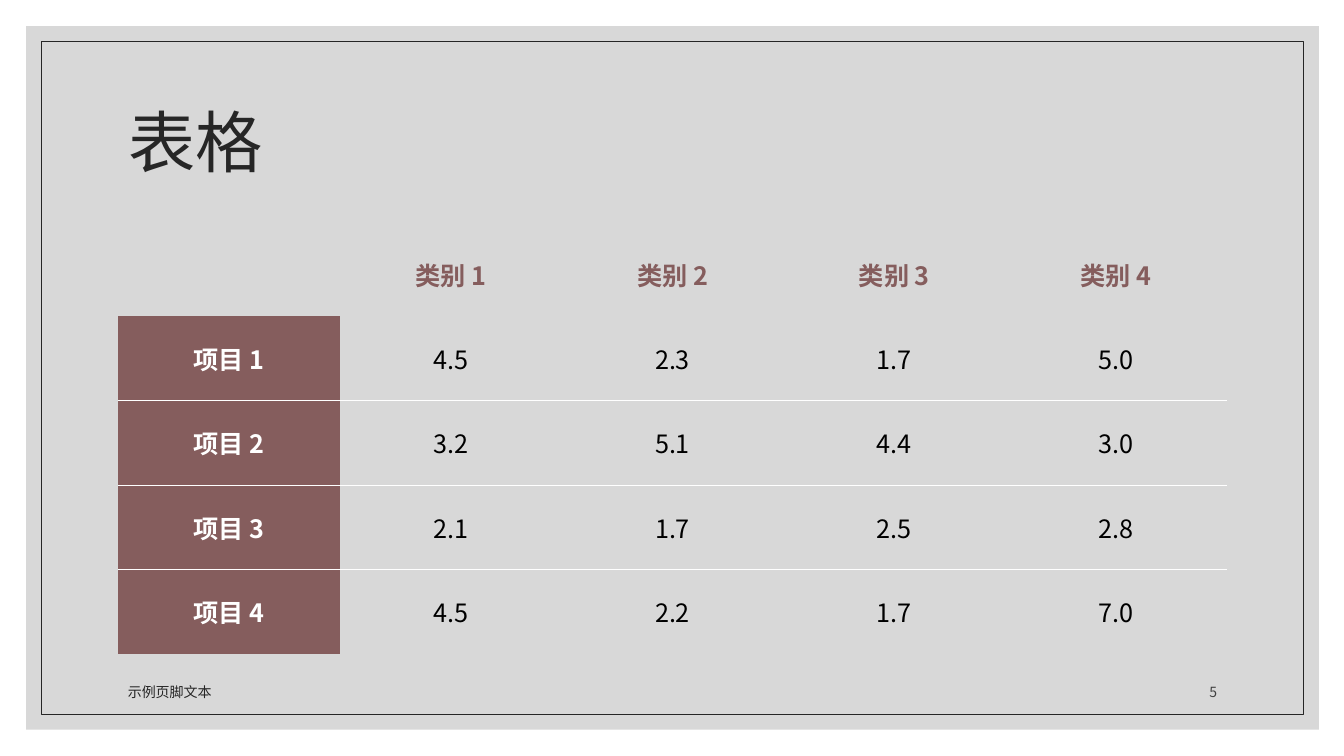
from lxml import etree
from pptx import Presentation
from pptx import util as u
from pptx.dml.color import RGBColor
from pptx.enum import shapes, text
from pptx.oxml.ns import qn

FONT = "Noto Sans CJK SC"
INK, GREY, ACCENT, WHITE, BLACK = "262626", "404040", "855D5D", "FFFFFF", "000000"
PLAIN_TABLE_STYLE = "{2D5ABB26-0587-4C30-8999-92F81FD0307C}"
LEFT, WIDTH = 1.17, 11

CATEGORIES = ["类别 1", "类别 2", "类别 3", "类别 4"]
ITEMS = [
    ("项目 1", "4.5", "2.3", "1.7", "5.0"),
    ("项目 2", "3.2", "5.1", "4.4", "3.0"),
    ("项目 3", "2.1", "1.7", "2.5", "2.8"),
    ("项目 4", "4.5", "2.2", "1.7", "7.0"),
]


def rgb(value):
    return RGBColor.from_string(value)


def inches(box):
    return [u.Inches(length) for length in box]


def add_run(paragraph, content, size, color, bold=False):
    run = paragraph.add_run()
    run.text = content
    run.font.size = u.Pt(size)
    run.font.bold = bold
    run.font.name = FONT
    run.font.color.rgb = rgb(color)
    east_asian = etree.SubElement(run.font._element, qn("a:ea"))
    east_asian.set("typeface", FONT)


def add_frame(slide, box, inset):
    """Translucent grey panel with a thin outline inside it."""
    left, top, width, height = box
    panel = slide.shapes.add_shape(shapes.MSO_SHAPE.RECTANGLE, *inches(box))
    panel.fill.solid()
    panel.fill.fore_color.rgb = rgb("BFBFBF")
    color = panel.element.spPr.find(".//" + qn("a:srgbClr"))
    etree.SubElement(color, qn("a:alpha")).set("val", "60000")
    panel.line.fill.background()

    inner = (left + inset, top + inset, width - 2 * inset, height - 2 * inset)
    outline = slide.shapes.add_shape(shapes.MSO_SHAPE.RECTANGLE, *inches(inner))
    outline.fill.background()
    outline.line.color.rgb = rgb(INK)
    outline.line.width = u.Pt(0.5)
    for shape in (panel, outline):
        shape.shadow.inherit = False


def place_title(slide, box, content):
    title = slide.shapes.title
    title.left, title.top, title.width, title.height = inches(box)
    # Bring the title in front of the frame
    title.element.getparent().append(title.element)
    frame = title.text_frame
    frame.word_wrap = True
    frame.vertical_anchor = text.MSO_ANCHOR.MIDDLE
    paragraph = frame.paragraphs[0]
    paragraph.alignment = text.PP_ALIGN.LEFT
    paragraph.line_spacing = 0.9
    add_run(paragraph, content, 48, INK)


def add_rule(cell, tag, position):
    """White cell border; tag is a:lnT or a:lnB."""
    border = etree.Element(qn(tag), w=str(u.Pt(1)))
    fill = etree.SubElement(border, qn("a:solidFill"))
    etree.SubElement(fill, qn("a:srgbClr")).set("val", WHITE)
    cell._tc.get_or_add_tcPr().insert(position, border)


def add_data_table(slide, box):
    rows = [("", *CATEGORIES), *ITEMS]
    last = len(rows) - 1
    table = slide.shapes.add_table(len(rows), len(rows[0]), *inches(box)).table
    table.first_row = table.horz_banding = False
    table._tbl.tblPr.find(qn("a:tableStyleId")).text = PLAIN_TABLE_STYLE
    for column in table.columns:
        column.width = u.Inches(box[2] / len(rows[0]))
    for row in table.rows:
        row.height = u.Inches(box[3] / len(rows))

    for r, values in enumerate(rows):
        for c, value in enumerate(values):
            cell = table.cell(r, c)
            cell.vertical_anchor = text.MSO_ANCHOR.MIDDLE
            is_item = c == 0 and r > 0
            if is_item:
                cell.fill.solid()
                cell.fill.fore_color.rgb = rgb(ACCENT)
            else:
                cell.fill.background()
            # Rules only between the item rows
            if 0 < r < last:
                add_rule(cell, "a:lnB", 0)
            if r > 1:
                add_rule(cell, "a:lnT", 0)
            if value:
                paragraph = cell.text_frame.paragraphs[0]
                paragraph.alignment = text.PP_ALIGN.CENTER
                color = ACCENT if r == 0 else WHITE if is_item else BLACK
                add_run(paragraph, value, 18, color, bold=r == 0 or c == 0)


def add_footer_text(slide, box, content, color, alignment):
    frame = slide.shapes.add_textbox(*inches(box)).text_frame
    frame.word_wrap = True
    frame.vertical_anchor = text.MSO_ANCHOR.BOTTOM
    paragraph = frame.paragraphs[0]
    paragraph.alignment = alignment
    add_run(paragraph, content, 10, color)


def add_footer(slide, box):
    left, top, width, height = box
    number_width = 0.92
    add_footer_text(slide, (left, top, 6.36, height), "示例页脚文本",
                    INK, text.PP_ALIGN.LEFT)
    add_footer_text(slide, (left + width - number_width, top, number_width, height),
                    "5", GREY, text.PP_ALIGN.RIGHT)


def build_table_slide(presentation):
    slide = presentation.slides.add_slide(presentation.slide_layouts[5])
    add_frame(slide, (0.26, 0.26, 12.82, 6.98), 0.15)
    place_title(slide, (LEFT, 0.7, WIDTH, 1.5), "表格")
    add_data_table(slide, (LEFT, 2.3, WIDTH, 4.19))
    add_footer(slide, (LEFT, 6.6, WIDTH, 0.4))


def main():
    presentation = Presentation()
    presentation.slide_width = u.Inches(13.33)
    presentation.slide_height = u.Inches(7.5)
    build_table_slide(presentation)
    presentation.save("out.pptx")


if __name__ == "__main__":
    main()
